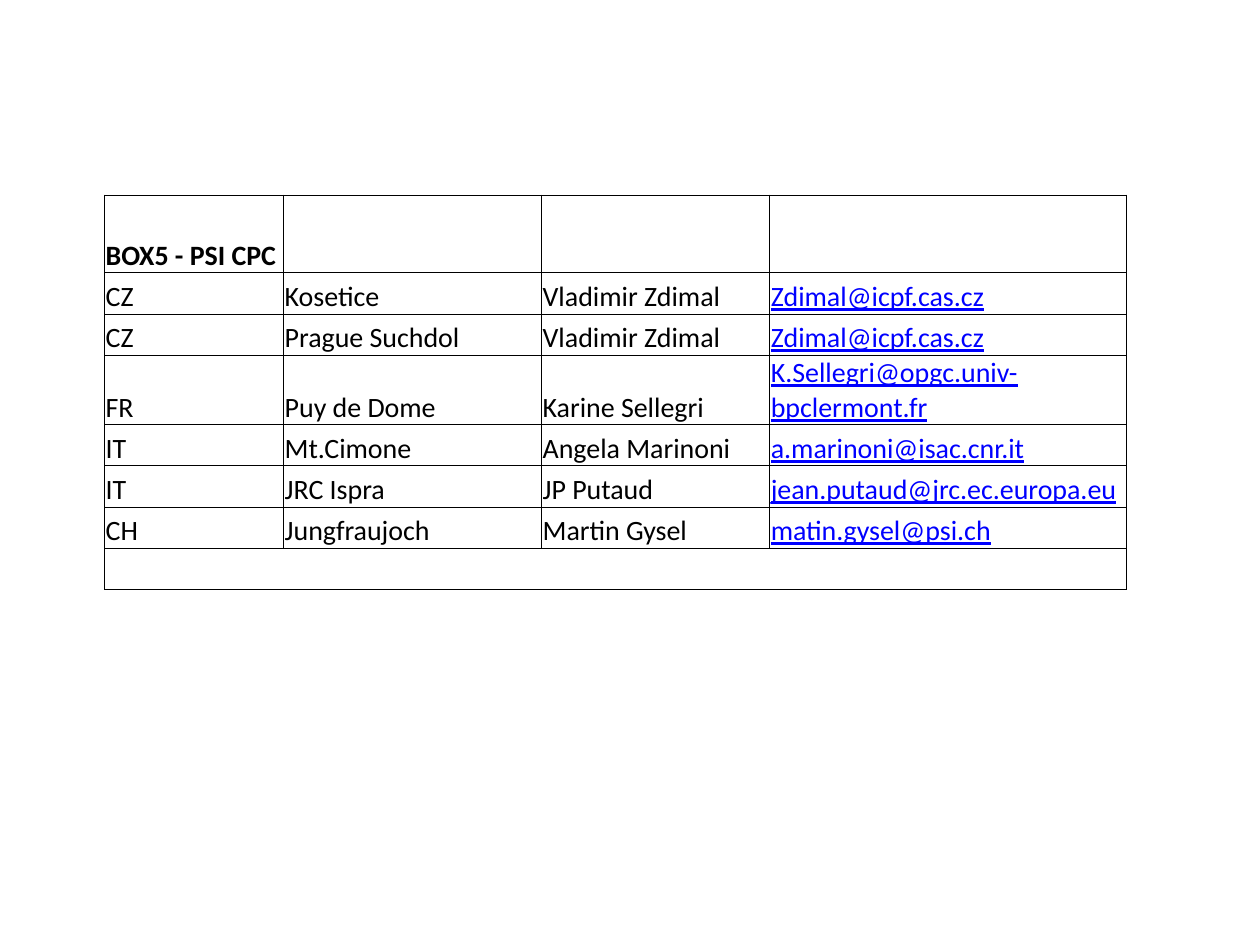
from lxml import etree
from pptx import Presentation
from pptx import util as u
from pptx.dml.color import RGBColor
from pptx.enum import text
from pptx.oxml import ns

COLORS = {"ink": "000000", "link": "0000FF"}
COLUMN_WIDTHS = [3.61, 5.2, 4.6, 7.19]
HEADER_HEIGHT, ROW_HEIGHT = 1.57, 0.83
HEADING = "BOX5 - PSI CPC"
STATIONS = [
    ("CZ", "Kosetice", "Vladimir Zdimal", "Zdimal@icpf.cas.cz"),
    ("CZ", "Prague Suchdol", "Vladimir Zdimal", "Zdimal@icpf.cas.cz"),
    ("FR", "Puy de Dome", "Karine Sellegri", "K.Sellegri@opgc.univ-bpclermont.fr"),
    ("IT", "Mt.Cimone", "Angela Marinoni", "a.marinoni@isac.cnr.it"),
    ("IT", "JRC Ispra", "JP Putaud", "jean.putaud@jrc.ec.europa.eu"),
    ("CH", "Jungfraujoch", "Martin Gysel", "matin.gysel@psi.ch"),
]


def write(frame, words, size=16, font="Calibri", color="ink", bold=False, underline=False):
    span = frame.paragraphs[0].add_run()
    span.text = words
    span.font.size, span.font.name = u.Pt(size), font
    span.font.bold, span.font.underline = bold, underline
    span.font.color.rgb = RGBColor.from_string(COLORS[color])


def set_borders(cell, sides):
    """Draw a thin line on the sides named (of L, R, T, B) and clear the others."""
    properties = cell._tc.get_or_add_tcPr()
    for position, side in enumerate("LRTB"):
        line = etree.Element(ns.qn(f"a:ln{side}"), w=str(u.Pt(0.5)))
        if side in sides:
            fill = etree.SubElement(line, ns.qn("a:solidFill"))
            etree.SubElement(fill, ns.qn("a:srgbClr"), val=COLORS["ink"])
        else:
            etree.SubElement(line, ns.qn("a:noFill"))
        properties.insert(position, line)


class StationPage:
    def __init__(self, deck):
        self.page = deck.slides.add_slide(deck.slide_layouts[6])
        self.inset = u.Cm(0.02)

    def cell(self, cell, words, sides="LRTB", **style):
        cell.fill.background()
        cell.vertical_anchor = text.MSO_ANCHOR.BOTTOM
        cell.margin_left = cell.margin_right = cell.margin_top = self.inset
        cell.margin_bottom = 0
        set_borders(cell, sides)
        if words:
            write(cell.text_frame, words, **style)

    def table(self, left, top, rows):
        heights = [HEADER_HEIGHT] + [ROW_HEIGHT] * (len(rows) - 1)
        table = self.page.shapes.add_table(
            len(rows), len(COLUMN_WIDTHS), u.Cm(left), u.Cm(top),
            u.Cm(sum(COLUMN_WIDTHS)), u.Cm(sum(heights))).table
        table.first_row = table.horz_banding = False
        for column, width in zip(table.columns, COLUMN_WIDTHS):
            column.width = u.Cm(width)
        for row, height in zip(table.rows, heights):
            row.height = u.Cm(height)
        last_row, last_column = len(rows) - 1, len(COLUMN_WIDTHS) - 1
        for r, row in enumerate(rows):
            for c, words in enumerate(row):
                sides = "LRTB"
                if r == last_row:  # the closing row has no inner lines
                    sides = "TB" + "L" * (c == 0) + "R" * (c == last_column)
                is_link = c == last_column
                self.cell(table.cell(r, c), words, sides, bold=r == 0,
                          color="link" if is_link else "ink", underline=is_link)


def main():
    deck = Presentation()
    deck.slide_width, deck.slide_height = u.Cm(25.4), u.Cm(19.05)
    blanks = [""] * len(COLUMN_WIDTHS)
    rows = [[HEADING] + blanks[1:], *STATIONS, blanks]
    StationPage(deck).table(2.11, 3.93, rows)
    deck.save("out.pptx")


if __name__ == "__main__":
    main()
